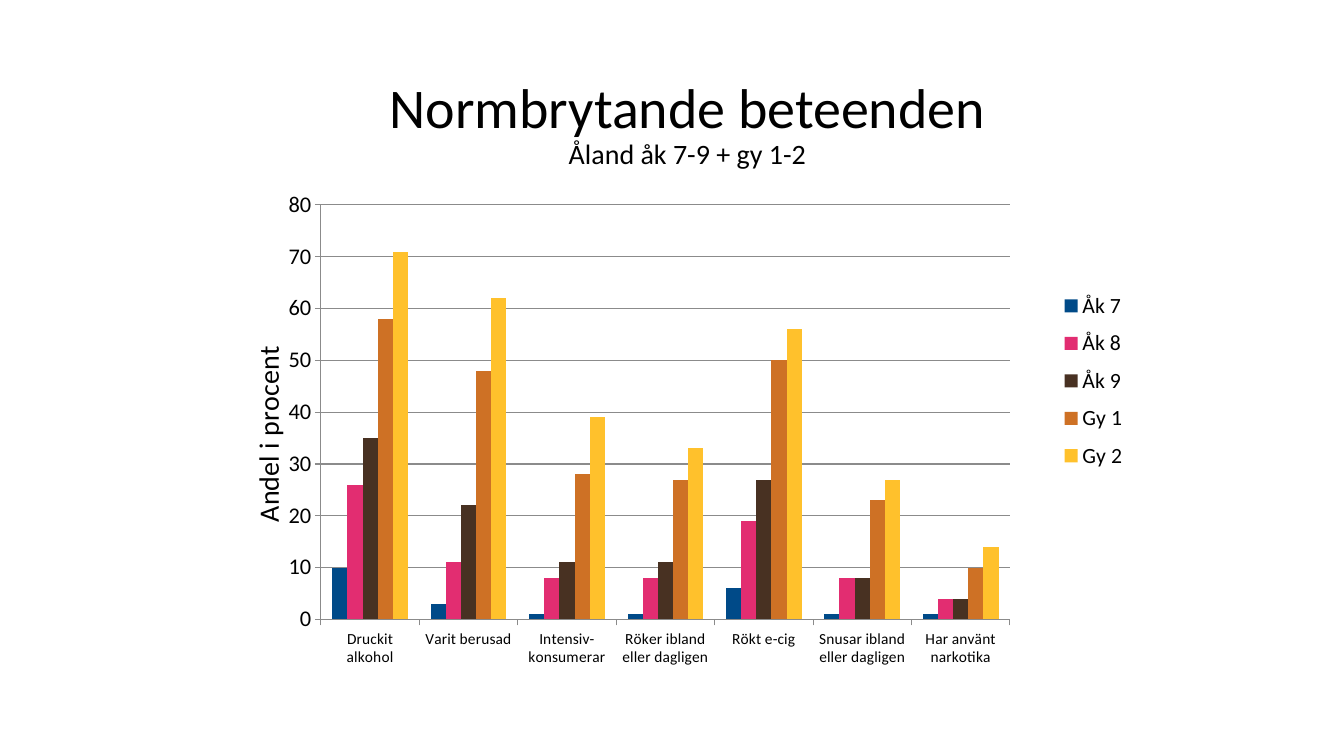
from typing import NamedTuple

import lxml.etree
import pptx
import pptx.chart.data
import pptx.dml.color
import pptx.enum.chart
import pptx.enum.text
import pptx.oxml.ns
import pptx.util

Pt = pptx.util.Pt
qn = pptx.oxml.ns.qn
FACE = "Calibri"
BLACK = "000000"
GRAY = "8B8B8B"
WIDTH, HEIGHT = 669.6, 380.16  # chart size in points


class Grade(NamedTuple):
    name: str
    shares: tuple[int, ...]
    color: str


class Line(NamedTuple):
    text: str
    size: float


HABITS = (
    "Druckit alkohol",
    "Varit berusad",
    "Intensiv- konsumerar",
    "Röker ibland eller dagligen",
    "Rökt e-cig",
    "Snusar ibland eller dagligen",
    "Har använt narkotika",
)
GRADES = (
    Grade("Åk 7", (10, 3, 1, 1, 6, 1, 1), "004A88"),
    Grade("Åk 8", (26, 11, 8, 8, 19, 8, 4), "E22D71"),
    Grade("Åk 9", (35, 22, 11, 11, 27, 8, 4), "483122"),
    Grade("Gy 1", (58, 48, 28, 27, 50, 23, 10), "CE7125"),
    Grade("Gy 2", (71, 62, 39, 33, 56, 27, 14), "FFC12C"),
)
HEADING = (Line("Normbrytande beteenden", 40), Line("Åland åk 7-9 + gy 1-2", 20))


def rgb(code: str) -> pptx.dml.color.RGBColor:
    return pptx.dml.color.RGBColor.from_string(code)


def style(font, size: float, face: str = FACE) -> None:
    font.size = Pt(size)
    font.name = face
    font.bold = False
    font.color.rgb = rgb(BLACK)


def stroke(line) -> None:
    line.color.rgb = rgb(GRAY)
    line.width = Pt(0.75)


def place(part, index: int, box: dict[str, float], inner: bool = False) -> None:
    """Fix a chart part at a box in points, as child number index."""
    for old in part.findall(qn("c:layout")):
        part.remove(old)
    values = {"layoutTarget": "inner"} if inner else {}
    values |= {"xMode": "edge", "yMode": "edge"}
    for key, length in box.items():
        values[key] = str(length / (WIDTH if key in "xw" else HEIGHT))
    layout = lxml.etree.Element(qn("c:layout"))
    manual = lxml.etree.SubElement(layout, qn("c:manualLayout"))
    for key, value in values.items():
        lxml.etree.SubElement(manual, qn(f"c:{key}")).set("val", value)
    part.insert(index, layout)


def add_title(slide) -> None:
    box = slide.shapes.add_textbox(Pt(156.24), Pt(50.4), Pt(WIDTH), Pt(71.28))
    frame = box.text_frame
    frame.word_wrap = True
    frame.vertical_anchor = pptx.enum.text.MSO_ANCHOR.BOTTOM
    frame.margin_left = frame.margin_right = Pt(0)
    frame.margin_top = frame.margin_bottom = Pt(0)
    para = frame.paragraphs[0]
    para.alignment = pptx.enum.text.PP_ALIGN.CENTER
    para.line_spacing = 0.9
    for rank, line in enumerate(HEADING):
        if rank:
            para.add_line_break()
        run = para.add_run()
        run.text = line.text
        style(run.font, line.size)


def set_axis(axis, size: float) -> None:
    style(axis.tick_labels.font, size)
    axis.major_tick_mark = pptx.enum.chart.XL_TICK_MARK.OUTSIDE
    axis.minor_tick_mark = pptx.enum.chart.XL_TICK_MARK.NONE
    stroke(axis.format.line)


def set_scale(axis) -> None:
    set_axis(axis, 16)
    axis.minimum_scale, axis.maximum_scale, axis.major_unit = 0, 80, 10
    axis.has_major_gridlines = True
    stroke(axis.major_gridlines.format.line)
    title = axis.axis_title
    run = title.text_frame.paragraphs[0].add_run()
    run.text = "Andel i procent"
    style(run.font, 20)
    place(title._element, 1, {"x": 8, "y": 137})


def set_legend(chart) -> None:
    chart.has_legend = True
    legend = chart.legend
    legend.position = pptx.enum.chart.XL_LEGEND_POSITION.RIGHT
    legend.include_in_layout = False
    style(legend.font, 15.5)
    place(legend._element, 1, {"x": 582, "y": 95, "w": 67, "h": 141})


def add_chart(slide) -> None:
    data = pptx.chart.data.CategoryChartData()
    data.categories = HABITS
    for grade in GRADES:
        data.add_series(grade.name, grade.shares)
    chart = slide.shapes.add_chart(
        pptx.enum.chart.XL_CHART_TYPE.COLUMN_CLUSTERED,
        Pt(165.6), Pt(106.56), Pt(WIDTH), Pt(HEIGHT), data,
    ).chart
    chart.has_title = False
    style(chart.font, 18, "Roboto")
    plot = chart.plots[0]
    plot.gap_width = 150
    plot.overlap = 0
    plot.vary_by_categories = False
    for series, grade in zip(plot.series, GRADES):
        series.format.fill.solid()
        series.format.fill.fore_color.rgb = rgb(grade.color)
    set_axis(chart.category_axis, 11)
    set_scale(chart.value_axis)
    set_legend(chart)
    area = chart._chartSpace.find(".//" + qn("c:plotArea"))
    place(area, 0, {"x": 63.6, "y": 39.9, "w": 492.2, "h": 296.1}, inner=True)


def main() -> None:
    deck = pptx.Presentation()
    deck.slide_width, deck.slide_height = Pt(960), Pt(540)
    slide = deck.slides.add_slide(deck.slide_layouts[6])
    add_title(slide)
    add_chart(slide)
    deck.save("out.pptx")


if __name__ == "__main__":
    main()
